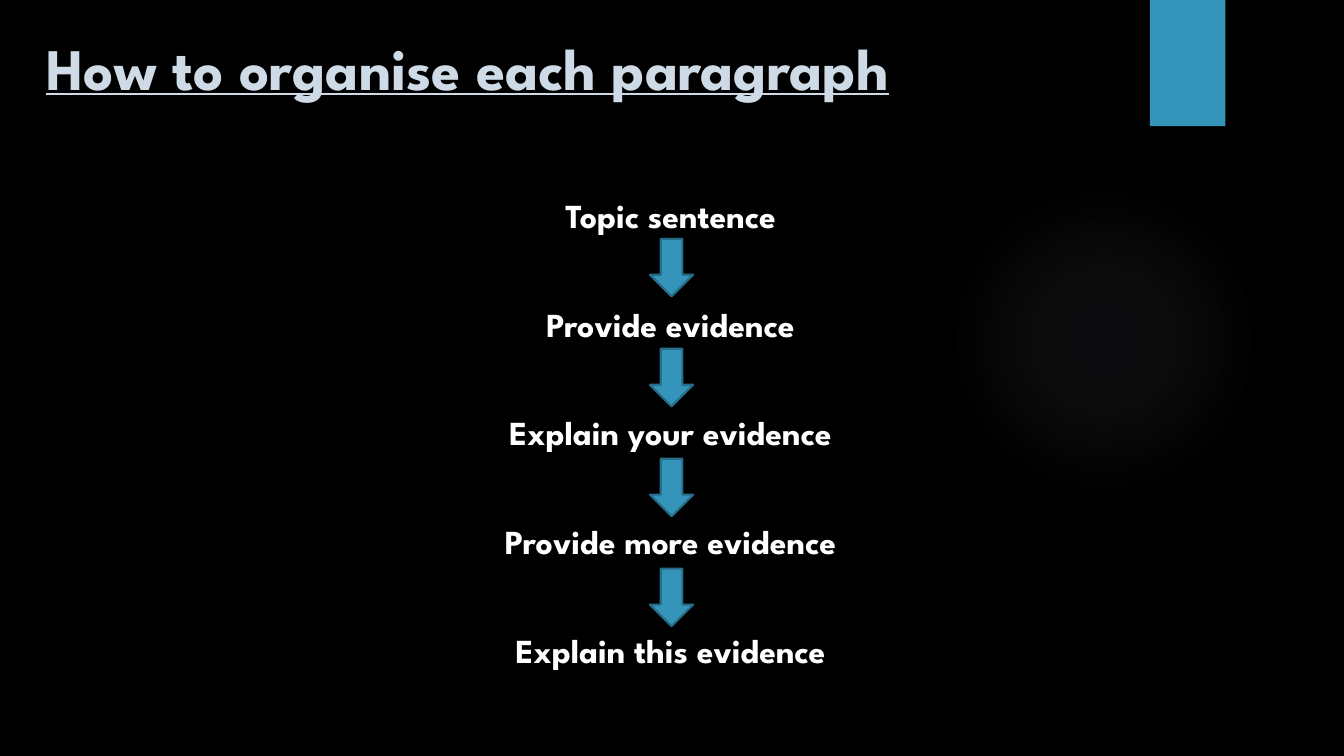
import pptx
import pptx.util
import pptx.dml.color
import pptx.enum.shapes
import pptx.enum.text
import pptx.oxml
import pptx.oxml.ns

Cm, Pt = pptx.util.Cm, pptx.util.Pt
KIND = pptx.enum.shapes.MSO_SHAPE
ALIGN = pptx.enum.text.PP_ALIGN
ANCHOR = pptx.enum.text.MSO_ANCHOR
FONT, BLUE, EDGE = "League Spartan", "3494BA", "266D8A"


def color(code):
    return pptx.dml.color.RGBColor.from_string(code)


def apply(item, style):
    for name, value in style.items():
        setattr(item, name, value)


class Page:
    head = {"name": FONT, "size": Pt(42), "bold": True, "underline": True}
    step = {"name": FONT, "size": Pt(24), "bold": True, "underline": False}

    def __init__(self, deck):
        self.slide = deck.slides.add_slide(deck.slide_layouts[1])

    def back(self, code):
        fill = self.slide.background.fill
        fill.solid()
        fill.fore_color.rgb = color(code)

    def place(self, holder, box, frame):
        apply(holder, dict(zip(("left", "top", "width", "height"), map(Cm, box))))
        apply(holder.text_frame, {"word_wrap": True, **frame,
                                  "auto_size": pptx.enum.text.MSO_AUTO_SIZE.NONE})

    def label(self, para, text, font, code, form):
        para.text = text
        apply(para, form)
        apply(para.font, font)
        para.font.color.rgb = color(code)

    def title(self, text, box):
        holder = self.slide.shapes.title
        self.place(holder, box, {"vertical_anchor": ANCHOR.MIDDLE})
        form = {"alignment": ALIGN.LEFT, "line_spacing": Pt(50.4)}
        self.label(holder.text_frame.paragraphs[0], text, self.head, "CEDBE6", form)

    def steps(self, items, box, inset, gap):
        holder = self.slide.placeholders[1]
        self.place(holder, box, {"vertical_anchor": ANCHOR.TOP, "margin_top": Cm(inset)})
        frame = holder.text_frame
        for i, text in enumerate(items):
            para = frame.add_paragraph() if i else frame.paragraphs[0]
            props = para._p.get_or_add_pPr()
            props.set("marL", "0")
            props.set("indent", "0")
            props.append(pptx.oxml.parse_xml(
                f'<a:buNone {pptx.oxml.ns.nsdecls("a")}/>'))
            form = {"alignment": ALIGN.CENTER, "line_spacing": Pt(28.8),
                    "space_before": Pt(gap if i else 0)}
            self.label(para, text, self.step, "FFFFFF", form)

    def shape(self, kind, box, fill=BLUE, edge=None):
        item = self.slide.shapes.add_shape(kind, *map(Cm, box))
        item.shadow.inherit = False
        item.fill.solid()
        item.fill.fore_color.rgb = color(fill)
        if edge:
            item.line.color.rgb = color(edge)
            item.line.width = Pt(1.5)
        else:
            item.line.fill.background()
        return item

    def glow(self, box, code, stops):
        item = self.shape(KIND.OVAL, box, code)
        marks = "".join(
            f'<a:gs pos="{pos * 1000}"><a:srgbClr val="{code}">'
            f'<a:alpha val="{alpha * 1000}"/></a:srgbClr></a:gs>'
            for pos, alpha in stops)
        grad = pptx.oxml.parse_xml(
            f'<a:gradFill {pptx.oxml.ns.nsdecls("a")} rotWithShape="1">'
            f'<a:gsLst>{marks}</a:gsLst><a:path path="circle">'
            '<a:fillToRect l="50000" t="50000" r="50000" b="50000"/>'
            '</a:path></a:gradFill>')
        props = item._element.spPr
        props.replace(props.find(pptx.oxml.ns.qn("a:solidFill")), grad)


def main():
    deck = pptx.Presentation()
    deck.slide_width, deck.slide_height = Cm(33.87), Cm(19.05)
    page = Page(deck)

    # Backdrop
    page.back("000000")
    page.glow((23.9, 4.65, 7.82, 7.82), "AAA7BC", ((0, 7), (36, 6), (69, 0)))
    page.shape(KIND.RECTANGLE, (28.98, 0, 1.9, 3.18))

    # Title and steps
    page.title("How to organise each paragraph", (0.91, 0.61, 26.14, 2.16))
    items = ("Topic sentence", "Provide evidence", "Explain your evidence",
             "Provide more evidence", "Explain this evidence")
    page.steps(items, (1.14, 3.58, 31.52, 14.3), 1.33, 48.8)

    # One arrow between each pair of steps
    for i in range(len(items) - 1):
        page.shape(KIND.DOWN_ARROW, (16.38, 6.02 + 2.77 * i, 1.09, 1.45), edge=EDGE)

    deck.save("out.pptx")


if __name__ == "__main__":
    main()
